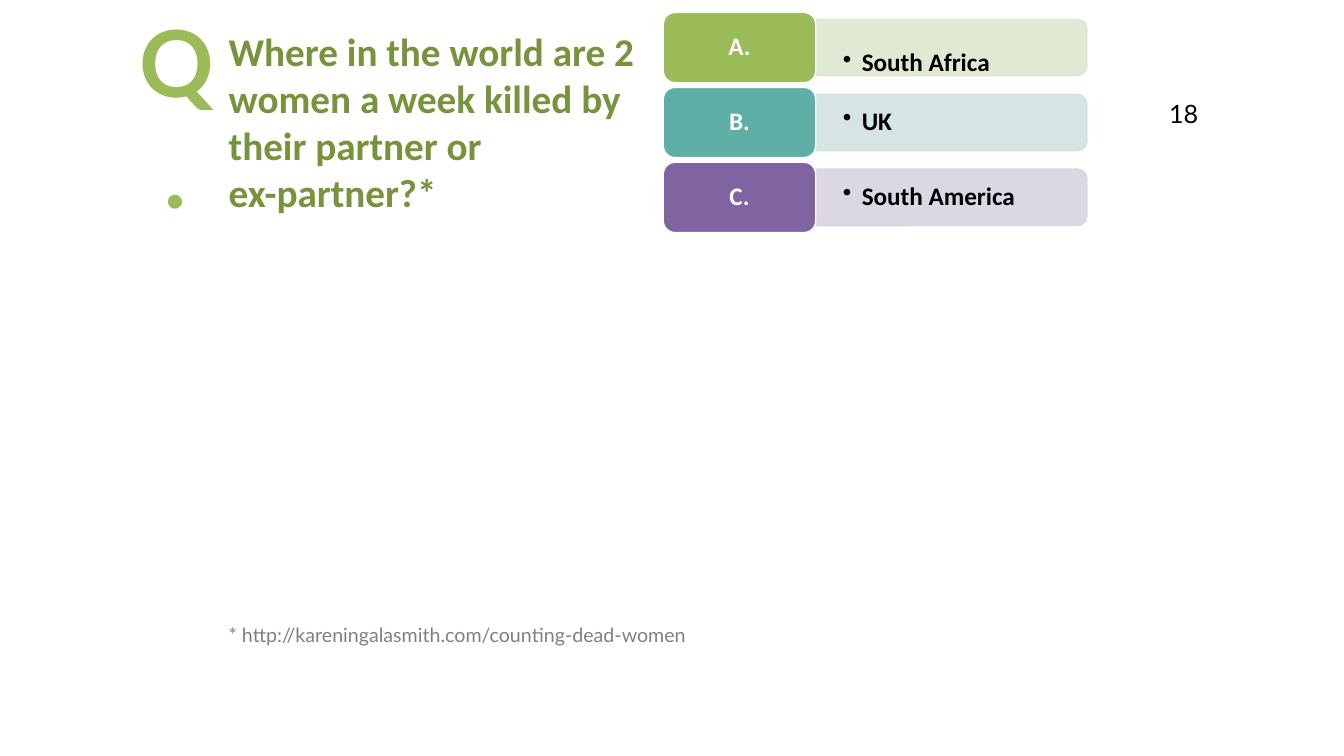
"""Build the quiz slide with a question and three answer options."""
from lxml import etree
from pptx import Presentation
from pptx.dml import color
from pptx.enum import shapes, text
from pptx.oxml import ns
from pptx.util import Pt


def rgb(value):
    return color.RGBColor.from_string(value)


def write(box, content, size, font, hue, bold=False, align=text.PP_ALIGN.LEFT):
    frame = box.text_frame
    frame.word_wrap = True
    frame.text = content
    for para in frame.paragraphs:
        para.alignment = align
        for span in para.runs:
            span.font.size = Pt(size)
            span.font.name = font
            span.font.bold = bold
            span.font.color.rgb = rgb(hue)
    return frame


deck = Presentation()
deck.slide_width, deck.slide_height = Pt(960), Pt(540)
page = deck.slides.add_slide(deck.slide_layouts[5])

initial = page.shapes.add_textbox(Pt(88.6), Pt(0), Pt(73.4), Pt(87))
write(initial, "Q.", 66, "Lato", "9BBB59", True, text.PP_ALIGN.CENTER)

question = page.shapes.title
question.left, question.top, question.width, question.height = Pt(156.2), Pt(15.8), Pt(304.6), Pt(143.3)
frame = write(question, "Where in the world are 2 women a week killed by their partner or\nex-partner?*",
              28, "Calibri", "77933C", True)
frame.auto_size = text.MSO_AUTO_SIZE.NONE
frame.vertical_anchor = text.MSO_ANCHOR.TOP
frame.margin_right = Pt(4)

label_left, label_width, label_height = 473.8, 108.9, 50.2
bar_left, bar_width, bar_height = label_left + label_width, 193.7, 40.3
first_middle, pitch = 34, 53.5
answers = [
    ("A.", "South Africa", "9BBB59", "DEE7D1", 11.5),
    ("B.", "UK", "5EAFA6", "D2E3E2", 0),
    ("C.", "South America", "8064A2", "D8D3E0", 0),
]
for row, (letter, answer, strong, pale, drop) in enumerate(answers):
    middle = first_middle + row * pitch

    bar = page.shapes.add_shape(
        shapes.MSO_SHAPE.ROUND_2_SAME_RECTANGLE,
        Pt(bar_left + (bar_width - bar_height) / 2), Pt(middle - bar_width / 2),
        Pt(bar_height), Pt(bar_width))
    bar.rotation = 90
    bar.shadow.inherit = False
    bar.line.width = Pt(1)
    for paint in (bar.fill, bar.line.fill):
        paint.solid()
        paint.fore_color.rgb = rgb(pale)
    for tint in bar.element.spPr.iter(ns.qn("a:srgbClr")):
        etree.SubElement(tint, ns.qn("a:alpha"), val="90000")

    option = page.shapes.add_textbox(
        Pt(bar_left), Pt(middle - 18.3 + drop), Pt(191.5), Pt(36.6))
    frame = write(option, answer, 18, "Calibri", "000000", True)
    frame.vertical_anchor = text.MSO_ANCHOR.MIDDLE
    frame.margin_left = frame.margin_right = Pt(19.4)
    frame.margin_top = frame.margin_bottom = Pt(5)
    para = frame.paragraphs[0]
    para.line_spacing = 0.9
    properties = para._p.get_or_add_pPr()
    properties.set("marL", str(Pt(13.5)))
    properties.set("indent", str(Pt(-13.5)))
    etree.SubElement(properties, ns.qn("a:buChar"), char="•")

    label = page.shapes.add_shape(
        shapes.MSO_SHAPE.ROUNDED_RECTANGLE,
        Pt(label_left), Pt(middle - label_height / 2), Pt(label_width), Pt(label_height))
    label.shadow.inherit = False
    label.fill.solid()
    label.fill.fore_color.rgb = rgb(strong)
    label.line.color.rgb = rgb("FFFFFF")
    label.line.width = Pt(1)
    frame = write(label, letter, 18, "Calibri", "FFFFFF", True, text.PP_ALIGN.CENTER)
    frame.vertical_anchor = text.MSO_ANCHOR.MIDDLE
    frame.paragraphs[0].line_spacing = 0.9

footnote = page.shapes.add_textbox(Pt(156.2), Pt(441.4), Pt(350), Pt(24.5))
write(footnote, "* http://kareningalasmith.com/counting-dead-women", 14, "Lato", "808080")

page_number = page.shapes.add_textbox(Pt(828), Pt(67), Pt(65.5), Pt(28.8))
write(page_number, "18", 18, "Lato", "000000")

deck.save("out.pptx")
